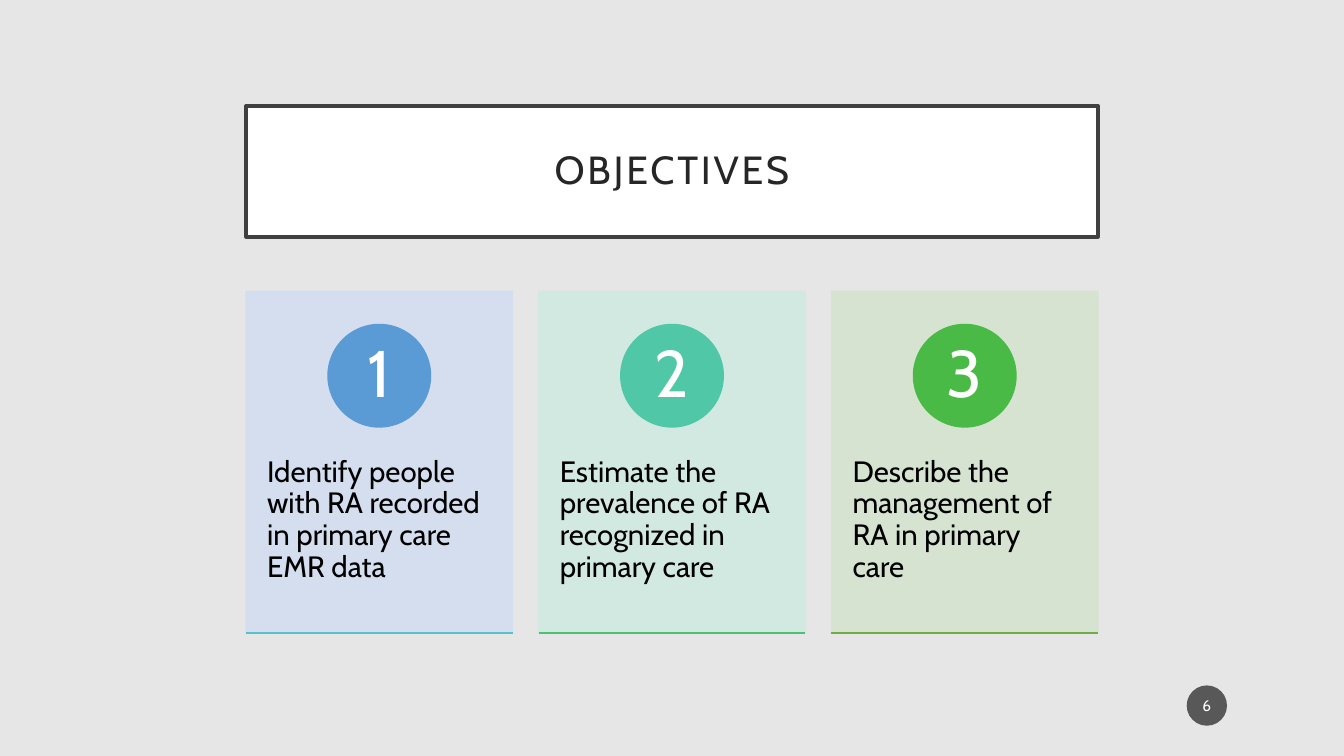
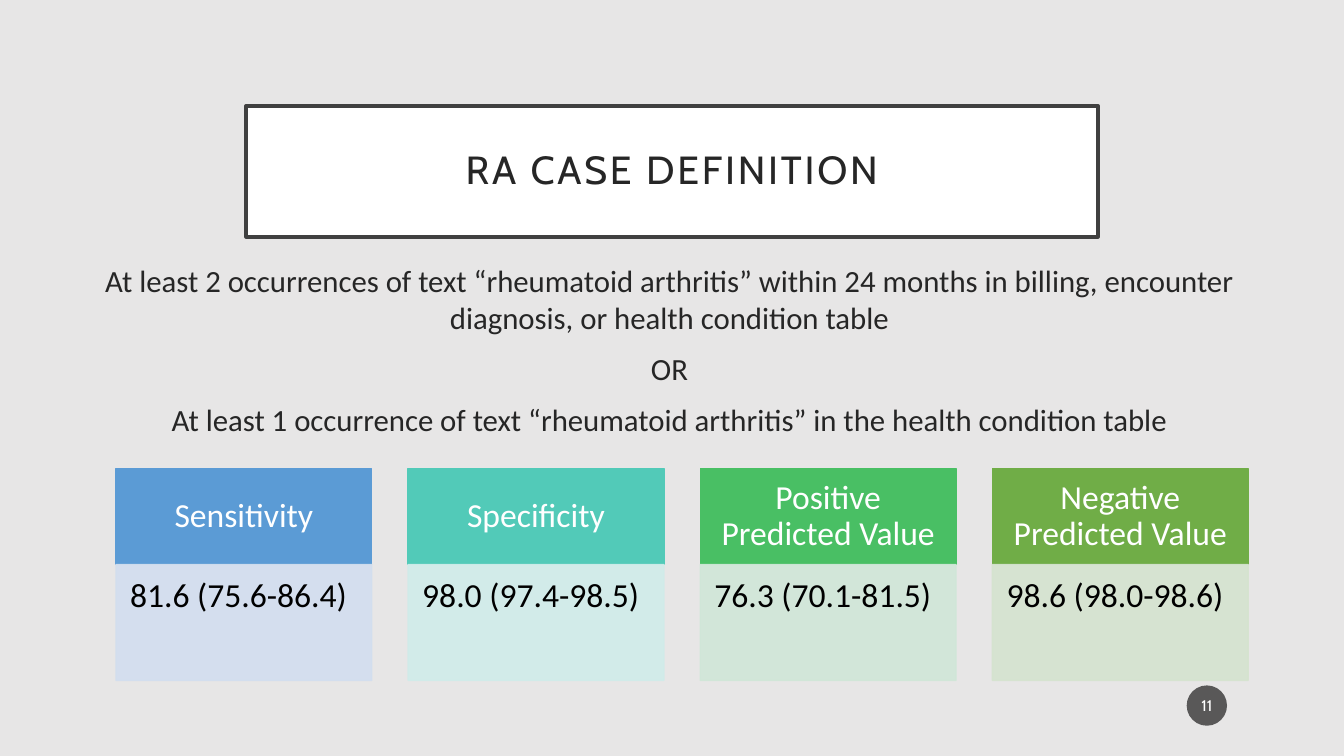
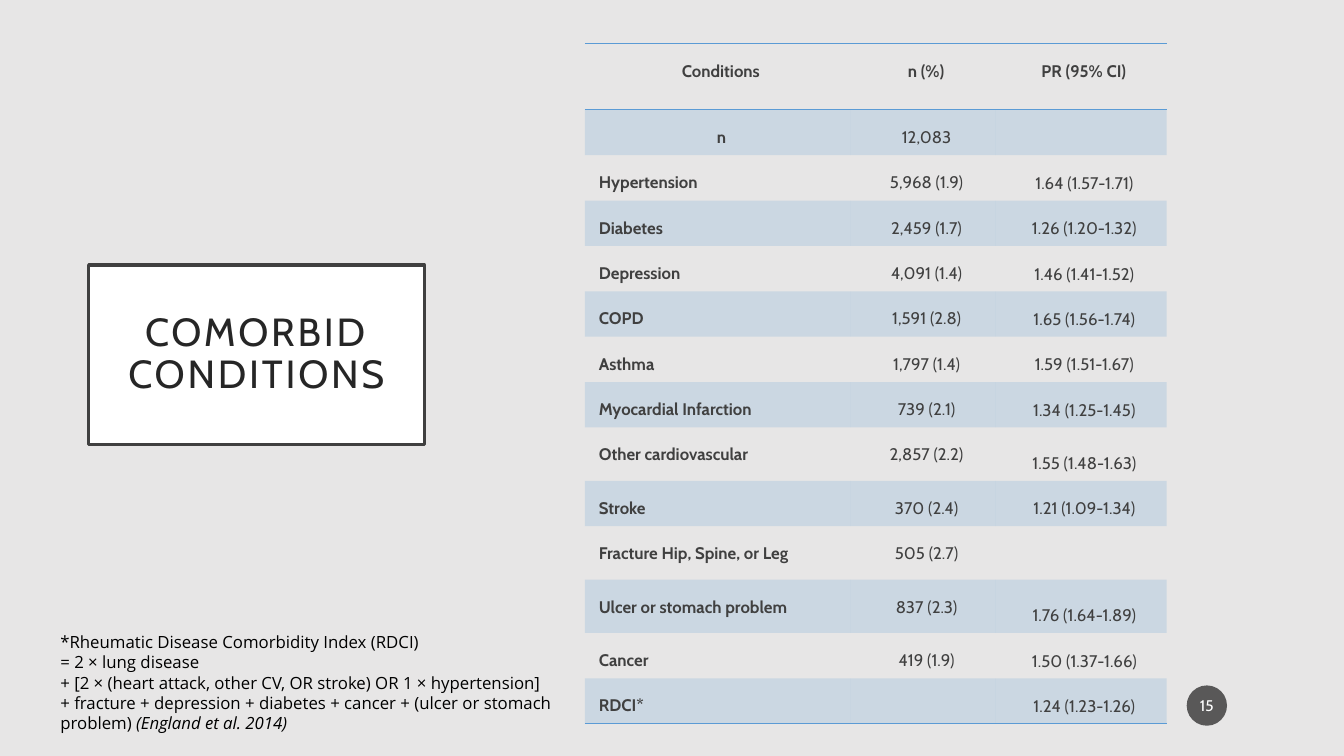
from pptx import Presentation
from pptx.dml.color import RGBColor
from pptx.enum.shapes import MSO_CONNECTOR, MSO_SHAPE
from pptx.enum.text import MSO_ANCHOR, PP_ALIGN
from pptx.oxml.ns import qn
from pptx.oxml.xmlchemy import OxmlElement
from pptx.util import Inches, Pt

RECT, OVAL = MSO_SHAPE.RECTANGLE, MSO_SHAPE.OVAL
STRAIGHT = MSO_CONNECTOR.STRAIGHT
LEFT, CENTER = PP_ALIGN.LEFT, PP_ALIGN.CENTER
TOP, MIDDLE, BOTTOM = MSO_ANCHOR.TOP, MSO_ANCHOR.MIDDLE, MSO_ANCHOR.BOTTOM

COLORS = {
    "background": "E7E6E6", "white": "FFFFFF", "black": "000000",
    "frame": "404040", "ink": "262626", "badge": "1D1D1D",
    "blue": "5B9BD5", "blue_tint": "D2DEEF", "cyan": "55C3CF",
    "mint": "50C8A7", "mint_tint": "D0EAE1", "emerald": "4BC174",
    "green": "4ABA46", "olive": "70AD47", "olive_tint": "D5E3CF",
    "teal": "52CAB8", "teal_tint": "D0ECEA",
    "jade": "49BF64", "jade_tint": "D0E7D8",
}
PLAIN_TABLE = "{2D5ABB26-0587-4C30-8999-92F81FD0307C}"
BOX_MARGINS = (0.1, 0.05, 0.1, 0.05)
WIDE_TITLE = (2.44, 1.05, 8.45, 1.3)
SIDE_TITLE = (0.88, 2.63, 3.33, 1.78)

# Each style holds a font, a colour name and a paragraph format.
STYLES = {
    "title": ({"name": "Cabin", "size": Pt(28)}, "ink",
              {"alignment": CENTER, "line_spacing": 0.9}),
    "page": ({"name": "Cabin", "size": Pt(11)}, "white", {"alignment": CENTER}),
    "number": ({"name": "Cabin", "size": Pt(47)}, "white",
               {"alignment": CENTER, "line_spacing": 0.9}),
    "objective": ({"name": "Cabin", "size": Pt(21)}, "black",
                  {"alignment": LEFT, "line_spacing": 0.9}),
    "definition": ({"name": "Calibri", "size": Pt(22)}, "ink",
                   {"alignment": CENTER, "space_before": Pt(10)}),
    "measure": ({"name": "Calibri", "size": Pt(24)}, "white",
                {"alignment": CENTER, "line_spacing": 0.9}),
    "value": ({"name": "Calibri", "size": Pt(24)}, "black",
              {"alignment": LEFT, "line_spacing": 0.9}),
    "footnote": ({"name": "Open Sans", "size": Pt(12)}, "black",
                 {"alignment": LEFT}),
    "cell": ({"name": "Cabin", "size": Pt(12)}, "frame", {"line_spacing": 1.5}),
}

OBJECTIVES = [
    ("Identify people with RA recorded in primary care EMR data",
     "blue", "blue_tint", "cyan"),
    ("Estimate the prevalence of RA recognized in primary care",
     "mint", "mint_tint", "emerald"),
    ("Describe the management of RA in primary care",
     "green", "olive_tint", "olive"),
]
DEFINITION = [
    "At least 2 occurrences of text “rheumatoid arthritis” within 24 months "
    "in billing, encounter diagnosis, or health condition table",
    "OR",
    "At least 1 occurrence of text “rheumatoid arthritis” in the health "
    "condition table",
]
MEASURES = [
    ("Sensitivity", "81.6 (75.6-86.4)", "blue", "blue_tint"),
    ("Specificity", "98.0 (97.4-98.5)", "teal", "teal_tint"),
    ("Positive Predicted Value", "76.3 (70.1-81.5)", "jade", "jade_tint"),
    ("Negative Predicted Value", "98.6 (98.0-98.6)", "olive", "olive_tint"),
]
CONDITIONS = [
    ("Conditions", "n (%)", "PR (95% CI)"),
    ("n", "12,083", ""),
    ("Hypertension", "5,968 (1.9)", "1.64 (1.57-1.71)"),
    ("Diabetes", "2,459 (1.7)", "1.26 (1.20-1.32)"),
    ("Depression", "4,091 (1.4)", "1.46 (1.41-1.52)"),
    ("COPD", "1,591 (2.8)", "1.65 (1.56-1.74)"),
    ("Asthma", "1,797 (1.4)", "1.59 (1.51-1.67)"),
    ("Myocardial Infarction", "739 (2.1)", "1.34 (1.25-1.45)"),
    ("Other cardiovascular", "2,857 (2.2)", "1.55 (1.48-1.63)"),
    ("Stroke", "370 (2.4)", "1.21 (1.09-1.34)"),
    ("Fracture Hip, Spine, or Leg", "505 (2.7)", ""),
    ("Ulcer or stomach problem", "837 (2.3)", "1.76 (1.64-1.89)"),
    ("Cancer", "419 (1.9)", "1.50 (1.37-1.66)"),
    ("RDCI*", "", "1.24 (1.23-1.26)"),
]
COLUMN_WIDTHS = (2.64, 1.43, 1.7)
ROW_HEIGHT, TALL_ROWS = 0.45, {0: 0.66, 8: 0.53, 10: 0.53, 11: 0.53}
FOOTNOTE = [
    "*Rheumatic Disease Comorbidity Index (RDCI)",
    "= 2 × lung disease ",
    "+ [2 × (heart attack, other CV, OR stroke) OR 1 × hypertension] ",
    "+ fracture + depression + diabetes + cancer + (ulcer or stomach problem) ",
]
CITATION = "(England et al. 2014)"


def rgb(color):
    return RGBColor.from_string(COLORS[color])


def inches(box):
    return [Inches(length) for length in box]


def set_all(target, values):
    for name, value in values.items():
        setattr(target, name, value)


def set_opacity(element, percent):
    for color in element.iter(qn("a:srgbClr")):
        alpha = OxmlElement("a:alpha")
        alpha.set("val", str(percent * 1000))
        color.append(alpha)


def set_margins(target, margins):
    sides = ("margin_left", "margin_top", "margin_right", "margin_bottom")
    set_all(target, dict(zip(sides, inches(margins))))


def add_run(paragraph, text, style, **extra):
    font_values, color, _ = STYLES[style]
    run = paragraph.add_run()
    run.text = text
    set_all(run.font, {**font_values, **extra})
    run.font.color.rgb = rgb(color)
    return run


def write(frame, texts, style, margins=BOX_MARGINS, anchor=TOP):
    """Fill a text frame, one paragraph for each text."""
    set_all(frame, {"word_wrap": True, "vertical_anchor": anchor})
    set_margins(frame, margins)
    for index, text in enumerate(texts):
        paragraph = frame.add_paragraph() if index else frame.paragraphs[0]
        set_all(paragraph, STYLES[style][2])
        add_run(paragraph, text, style)


def add_block(slide, kind, box, fill, line=None, width=1, opacity=100):
    block = slide.shapes.add_shape(kind, *inches(box))
    block.shadow.inherit = False
    block.fill.solid()
    block.fill.fore_color.rgb = rgb(fill)
    if line:
        block.line.color.rgb = rgb(line)
        block.line.width = Pt(width)
    else:
        block.line.fill.background()
    if opacity < 100:
        set_opacity(block._element.spPr, opacity)
    return block


def add_rule(slide, left, y, width, color):
    rule = slide.shapes.add_connector(
        STRAIGHT, *inches((left, y, left + width, y)))
    rule.line.color.rgb = rgb(color)
    rule.line.width = Pt(1)
    rule._element.spPr.append(OxmlElement("a:effectLst"))


def split_columns(box, count, gap):
    left, top, width, height = box
    column = (width - gap * (count - 1)) / count
    return [(left + i * (column + gap), top, column, height)
            for i in range(count)]


def start_slide(deck, title, page, title_box=WIDE_TITLE, side_margin=0.2):
    """Add a slide with the framed title and the page badge."""
    slide = deck.slides.add_slide(deck.slide_layouts[6])
    slide.background.fill.solid()
    slide.background.fill.fore_color.rgb = rgb("background")
    frame = add_block(slide, RECT, title_box, "white", "frame", 2.5).text_frame
    write(frame, [title], "title", (side_margin, 0.2, side_margin, 0.2), MIDDLE)
    frame.paragraphs[0].runs[0].font._element.set("spc", "200")
    badge = add_block(slide, OVAL, (11.77, 6.8, 0.4, 0.4), "badge", opacity=70)
    write(badge.text_frame, [str(page)], "page", (0.02, 0.05, 0.02, 0.05), MIDDLE)
    return slide


def add_objective(slide, box, number, text, color, tint, edge):
    left, top, width, height = box
    card = add_block(slide, RECT, box, tint, tint, opacity=90)
    write(card.text_frame, [text], "objective", (0.21, 1.64, 0.21, 0.36))
    disc = height * 0.3
    disc_box = (left + (width - disc) / 2, top + height * 0.1 - 0.01, disc, disc)
    circle = add_block(slide, OVAL, disc_box, color, color)
    write(circle.text_frame, [str(number)], "number",
          (0.08, 0.01, 0.08, 0.01), MIDDLE)
    add_rule(slide, left, top + height, width, edge)


def add_measure(slide, box, name, value, color, tint):
    left, top, width, height = box
    head = 0.95
    header = add_block(slide, RECT, (left, top, width, head), color, color)
    write(header.text_frame, [name], "measure", (0.19, 0.11, 0.19, 0.11), MIDDLE)
    body = add_block(slide, RECT, (left, top + head, width, height - head),
                     tint, tint, opacity=90)
    write(body.text_frame, [value], "value", (0.14, 0.14, 0.19, 0.21))


def add_borders(cell, sides):
    properties = cell._tc.get_or_add_tcPr()
    for index, side in enumerate(sides):
        line = OxmlElement("a:ln" + side)
        line.set("w", str(Pt(1)))
        fill = OxmlElement("a:solidFill")
        color = OxmlElement("a:srgbClr")
        color.set("val", COLORS["blue"])
        fill.append(color)
        line.append(fill)
        properties.insert(index, line)


def fill_cell(cell, text, row, column):
    is_header, is_last = row == 0, row == len(CONDITIONS) - 1
    if row % 2:
        cell.fill.solid()
        cell.fill.fore_color.rgb = rgb("blue")
        set_opacity(cell._tc.tcPr, 20)
    else:
        cell.fill.background()
    add_borders(cell, "TB" if is_header else "B" if is_last else "")
    if not text:
        return
    pad = 0.08 if is_header else 0.07
    set_margins(cell, (0.14, pad, pad, pad))
    cell.vertical_anchor = BOTTOM if column == 2 and row else TOP
    paragraph = cell.text_frame.paragraphs[0]
    set_all(paragraph, STYLES["cell"][2])
    paragraph.alignment = LEFT if column == 0 and row > 1 else CENTER
    add_run(paragraph, text, "cell", bold=is_header or column == 0)


def add_conditions_table(slide, left, top):
    heights = [TALL_ROWS.get(row, ROW_HEIGHT) for row in range(len(CONDITIONS))]
    box = (left, top, sum(COLUMN_WIDTHS), sum(heights))
    graphic = slide.shapes.add_table(
        len(heights), len(COLUMN_WIDTHS), *inches(box))
    table = graphic.table
    table._tbl.tblPr.find(qn("a:tableStyleId")).text = PLAIN_TABLE
    set_all(table, {"first_row": False, "horz_banding": False})
    for column, width in zip(table.columns, COLUMN_WIDTHS):
        column.width = Inches(width)
    for row, (height, texts) in enumerate(zip(heights, CONDITIONS)):
        table.rows[row].height = Inches(height)
        for column, text in enumerate(texts):
            fill_cell(table.cell(row, column), text, row, column)


def build_objectives(deck):
    slide = start_slide(deck, "OBJECTIVES", 6)
    boxes = split_columns((2.44, 2.89, 8.45, 3.39), len(OBJECTIVES), 0.26)
    for number, (box, objective) in enumerate(zip(boxes, OBJECTIVES), 1):
        add_objective(slide, box, number, *objective)


def build_case_definition(deck):
    slide = start_slide(deck, "RA CASE DEFINITION", 11)
    definition = slide.shapes.add_textbox(*inches((0.89, 2.55, 11.5, 1.75)))
    write(definition.text_frame, DEFINITION, "definition")
    boxes = split_columns((1.15, 4.65, 11.23, 2.1), len(MEASURES), 0.36)
    for box, measure in zip(boxes, MEASURES):
        add_measure(slide, box, *measure)


def build_comorbid_conditions(deck):
    slide = start_slide(deck, "COMORBID CONDITIONS", 15, SIDE_TITLE, 0.3)
    add_conditions_table(slide, 5.8, 0.43)
    footnote = slide.shapes.add_textbox(*inches((0.5, 6.22, 5.11, 1.11)))
    write(footnote.text_frame, FOOTNOTE, "footnote")
    add_run(footnote.text_frame.paragraphs[-1], CITATION, "footnote", italic=True)


def main():
    deck = Presentation()
    set_all(deck, {"slide_width": Inches(13.33), "slide_height": Inches(7.5)})
    build_objectives(deck)
    build_case_definition(deck)
    build_comorbid_conditions(deck)
    deck.save("out.pptx")


if __name__ == "__main__":
    main()
